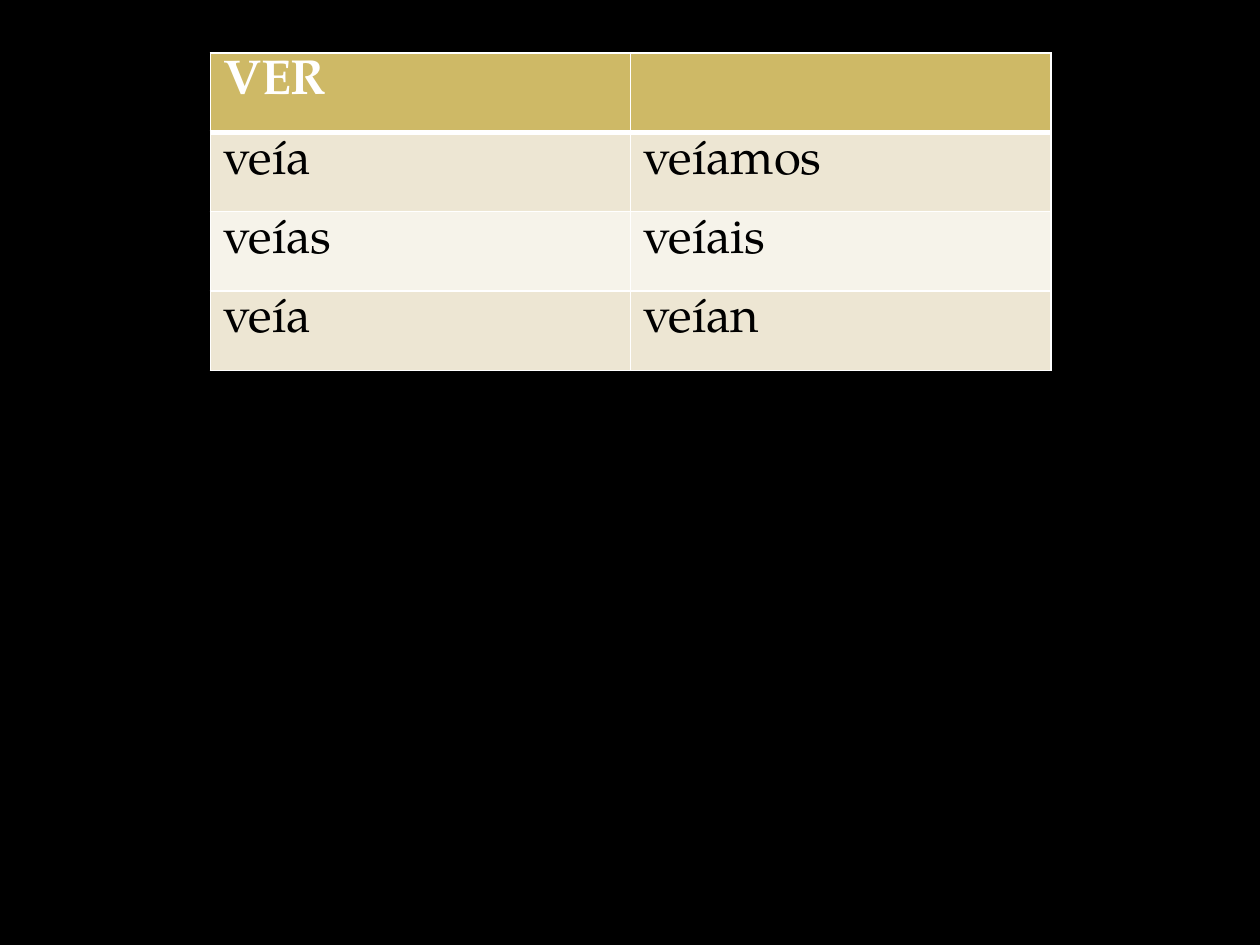
from lxml import etree
from pptx import Presentation
from pptx import util as u
from pptx.dml.color import RGBColor
from pptx.oxml.ns import qn

FONT = "TeX Gyre Pagella"
WHITE, BLACK = "FFFFFF", "000000"
HEADER_FILL = "CEB966"
BAND_FILLS = ["EDE6D3", "F6F3EA"]
CONJUGATION = [
    ["VER", ""],
    ["veía", "veíamos"],
    ["veías", "veíais"],
    ["veía", "veían"],
]


def color(value):
    return RGBColor.from_string(value)


def set_borders(cell, widths):
    """Draw white borders; widths maps a side (L, R, T, B) to points."""
    properties = cell._tc.get_or_add_tcPr()
    for side, width in widths.items():
        line = etree.SubElement(properties, qn(f"a:ln{side}"), w=str(u.Pt(width)))
        fill = etree.SubElement(line, qn("a:solidFill"))
        etree.SubElement(fill, qn("a:srgbClr"), val=WHITE)


def write_cell(cell, words, is_header):
    cell.text = words
    paragraph = cell.text_frame.paragraphs[0]
    formats = {"name": FONT, "size": u.Pt(28), "bold": is_header}
    # An empty cell carries its format on the paragraph
    font = paragraph.runs[0].font if paragraph.runs else paragraph.font
    for name, value in formats.items():
        setattr(font, name, value)
    font.color.rgb = color(WHITE if is_header else BLACK)


def add_conjugation_table(slide, left, top, width, height):
    rows, columns = len(CONJUGATION), len(CONJUGATION[0])
    table = slide.shapes.add_table(rows, columns, left, top, width, height).table
    for row_index, row in enumerate(CONJUGATION):
        is_header = row_index == 0
        fill = HEADER_FILL if is_header else BAND_FILLS[(row_index - 1) % 2]
        # The rule under the header is thicker
        widths = {"L": 1, "R": 1,
                  "T": 3 if row_index == 1 else 1,
                  "B": 3 if is_header else 1}
        for column_index, words in enumerate(row):
            cell = table.cell(row_index, column_index)
            set_borders(cell, widths)
            cell.fill.solid()
            cell.fill.fore_color.rgb = color(fill)
            write_cell(cell, words, is_header)


def main():
    presentation = Presentation()
    presentation.slide_width = u.Inches(10)
    presentation.slide_height = u.Inches(7.5)
    slide = presentation.slides.add_slide(presentation.slide_layouts[6])

    # Black background
    background = slide.background.fill
    background.solid()
    background.fore_color.rgb = color(BLACK)

    # Verb table
    add_conjugation_table(slide, u.Inches(1.67), u.Inches(0.42),
                          u.Inches(6.67), u.Inches(2.52))
    presentation.save("out.pptx")


if __name__ == "__main__":
    main()
